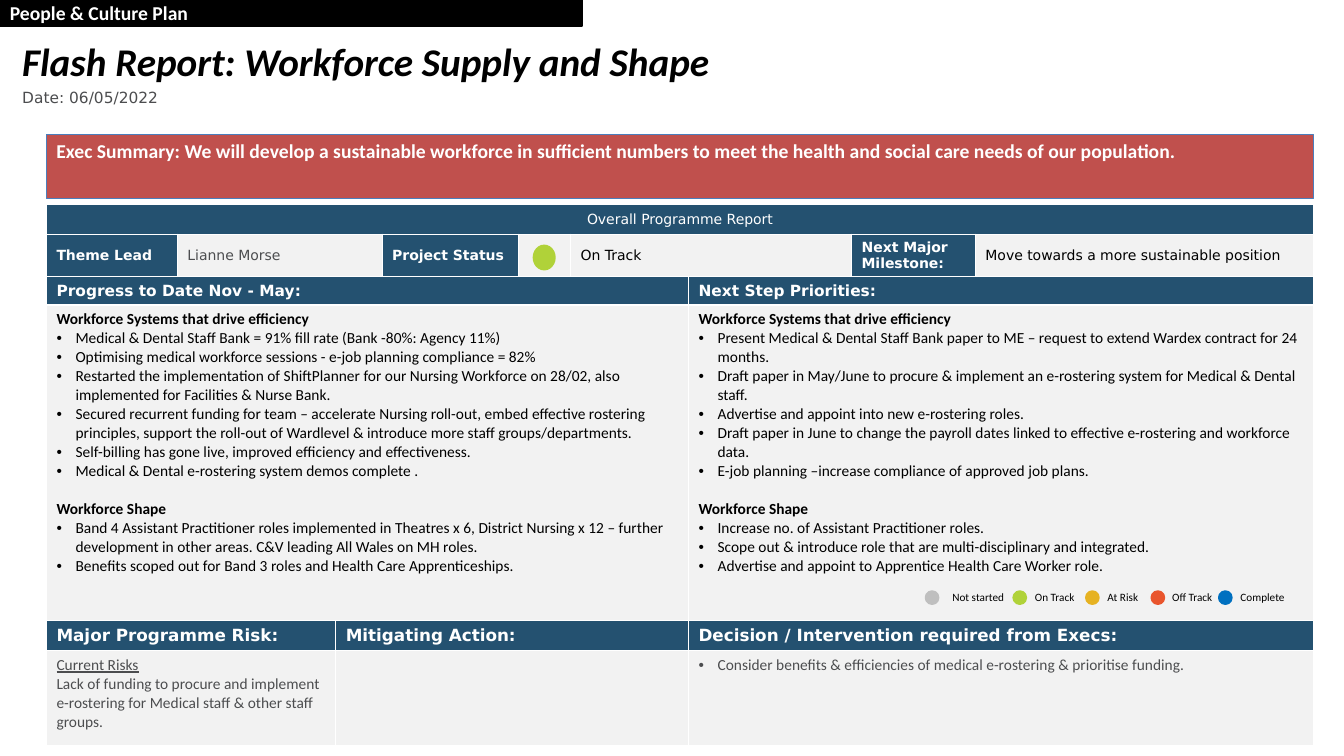
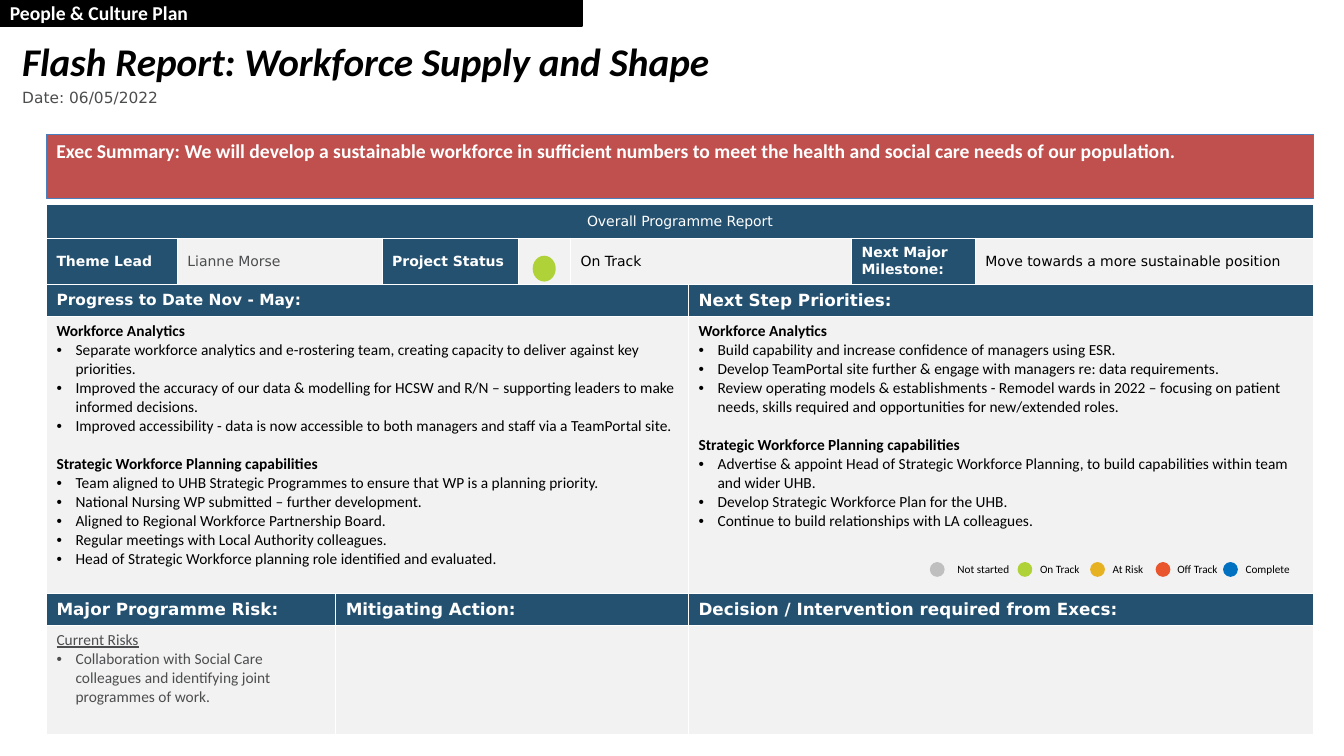
"""Build two flash report slides for the workforce supply and shape theme."""
from dataclasses import dataclass

from lxml import etree
from pptx import Presentation
from pptx import util as u
from pptx.dml.color import RGBColor
from pptx.enum import shapes, text
from pptx.oxml import ns


@dataclass(frozen=True)
class Theme:
    navy: str = "245170"
    panel: str = "F2F2F2"
    red: str = "C0504D"
    red_edge: str = "4B7EBC"
    black: str = "000000"
    white: str = "FFFFFF"
    grey: str = "4C4D4F"
    not_started: str = "BFBFBF"
    on_track: str = "B0D239"
    at_risk: str = "E6B222"
    off_track: str = "E9552D"
    complete: str = "0070C0"
    body_font: str = "Calibri"
    label_font: str = "DejaVu Sans"
    title_size: int = 28
    banner_size: int = 14
    heading_size: int = 12
    body_size: int = 11
    label_size: int = 10
    legend_size: int = 8


theme = Theme()

LEFT, WIDTH = 1.17, 31.93
COLUMNS = [3.3, 3.99, 1.17, 3.43, 1.32, 2.97, 4.11, 3.12, 8.52]
CELL_STARTS = [[0], [0, 1, 3, 4, 5, 7, 8], [0, 6], [0, 6], [0, 2, 6], [0, 2, 6]]
STATUS_ROW = ["Theme Lead", "Lianne Morse", "Project Status", "", "On Track",
              "Next Major Milestone:", "Move towards a more sustainable position"]
STATUS_LABELS = {"Theme Lead", "Project Status", "Next Major Milestone:"}
LEGEND = [
    ("Not started", theme.not_started, 0, 0.41, 2.18),
    ("On Track", theme.on_track, 2.21, 0.28, 1.7),
    ("At Risk", theme.at_risk, 4.04, 0.28, 1.45),
    ("Off Track", theme.off_track, 5.69, 0.26, 1.75),
    ("Complete", theme.complete, 7.39, 0.28, 1.68),
]

REPORTS = [
    {
        "rows": [0.74, 1.07, 0.71, 7.95, 0.76, 2.39],
        "priorities_size": theme.body_size,
        "status_top": 6.2,
        "legend": (23.34, 14.91),
        "progress": [
            ("Workforce Systems that drive efficiency", [
                "Medical & Dental Staff Bank = 91% fill rate (Bank -80%: Agency 11%)",
                "Optimising medical workforce sessions - e-job planning compliance = 82%",
                "Restarted the implementation of ShiftPlanner for our Nursing Workforce on 28/02, "
                "also implemented for Facilities & Nurse Bank.",
                "Secured recurrent funding for team – accelerate Nursing roll-out, embed effective "
                "rostering principles, support the roll-out of Wardlevel & introduce more staff "
                "groups/departments.",
                "Self-billing has gone live, improved efficiency and effectiveness.",
                "Medical & Dental e-rostering system demos complete .",
            ]),
            ("Workforce Shape", [
                "Band 4 Assistant Practitioner roles implemented in Theatres x 6, District Nursing "
                "x 12 – further development in other areas. C&V leading All Wales on MH roles.",
                "Benefits scoped out for Band 3 roles and Health Care Apprenticeships.",
            ]),
        ],
        "priorities": [
            ("Workforce Systems that drive efficiency", [
                "Present Medical & Dental Staff Bank paper to ME – request to extend Wardex "
                "contract for 24 months.",
                "Draft paper in May/June to procure & implement an e-rostering system for Medical "
                "& Dental staff.",
                "Advertise and appoint into new e-rostering roles.",
                "Draft paper in June to change the payroll dates linked to effective e-rostering "
                "and workforce data.",
                "E-job planning –increase compliance of approved job plans.",
            ]),
            ("Workforce Shape", [
                "Increase no. of Assistant Practitioner roles.",
                "Scope out & introduce role that are multi-disciplinary and integrated.",
                "Advertise and appoint to Apprentice Health Care Worker role.",
            ]),
        ],
        "risk": "Lack of funding to procure and implement e-rostering for Medical staff & other "
                "staff groups.",
        "risk_bullet": False,
        "decision": "Consider benefits & efficiencies of medical e-rostering & prioritise funding.",
    },
    {
        "rows": [0.84, 1.17, 0.81, 6.98, 0.81, 2.74],
        "priorities_size": theme.heading_size,
        "status_top": 6.48,
        "legend": (23.47, 14.2),
        "progress": [
            ("Workforce Analytics", [
                "Separate workforce analytics and e-rostering team, creating capacity to deliver "
                "against key priorities.",
                "Improved the accuracy of our data & modelling for HCSW and R/N – supporting "
                "leaders to make informed decisions.",
                "Improved accessibility - data is now accessible to both managers and staff via a "
                "TeamPortal site.",
            ]),
            ("Strategic Workforce Planning capabilities", [
                "Team aligned to UHB Strategic Programmes to ensure that WP is a planning priority.",
                "National Nursing WP submitted – further development.",
                "Aligned to Regional Workforce Partnership Board.",
                "Regular meetings with Local Authority colleagues.",
                "Head of Strategic Workforce planning role identified and evaluated.",
            ]),
        ],
        "priorities": [
            ("Workforce Analytics", [
                "Build capability and increase confidence of managers using ESR.",
                "Develop TeamPortal site further & engage with managers re: data requirements.",
                "Review operating models & establishments - Remodel wards in 2022 – focusing on "
                "patient needs, skills required and opportunities for new/extended roles.",
            ]),
            ("Strategic Workforce Planning capabilities", [
                "Advertise & appoint Head of Strategic Workforce Planning, to build capabilities "
                "within team and wider UHB.",
                "Develop Strategic Workforce Plan for the UHB.",
                "Continue to build relationships with LA colleagues.",
            ]),
        ],
        "risk": "Collaboration with Social Care colleagues and identifying joint programmes of work.",
        "risk_bullet": True,
        "decision": "",
    },
]


def write(frame, content, size=theme.body_size, colour=theme.black, font=theme.body_font,
          bold=False, italic=False, underline=False, bullet=False, before=0,
          align=text.PP_ALIGN.LEFT):
    paragraph = frame.add_paragraph() if frame.text else frame.paragraphs[0]
    paragraph.alignment = align
    if before:
        paragraph.space_before = u.Pt(before)
    if bullet:
        properties = paragraph._p.get_or_add_pPr()
        properties.set("marL", str(u.Cm(0.48)))
        properties.set("indent", str(-u.Cm(0.48)))
        etree.SubElement(properties, ns.qn("a:buFont")).set("typeface", "Arial")
        etree.SubElement(properties, ns.qn("a:buChar")).set("char", "•")
    run = paragraph.add_run()
    run.text = content
    run.font.size = u.Pt(size)
    run.font.name = font
    run.font.color.rgb = RGBColor.from_string(colour)
    run.font.bold, run.font.italic, run.font.underline = bold, italic, underline


def add_block(parent, box, kind=None, fill=None, edge=None, edge_width=2,
              anchor=text.MSO_ANCHOR.TOP):
    box = [u.Cm(length) for length in box]
    if kind is None:
        shape = parent.add_textbox(*box)
    else:
        shape = parent.add_shape(kind, *box)
        shape.shadow.inherit = False
        shape.fill.solid()
        shape.fill.fore_color.rgb = RGBColor.from_string(fill)
        shape.line.color.rgb = RGBColor.from_string(edge or fill)
        shape.line.width = u.Pt(edge_width)
    shape.text_frame.word_wrap = True
    shape.text_frame.vertical_anchor = anchor
    return shape.text_frame


presentation = Presentation()
presentation.slide_width, presentation.slide_height = u.Cm(33.87), u.Cm(19.05)
RECTANGLE, OVAL = shapes.MSO_SHAPE.RECTANGLE, shapes.MSO_SHAPE.OVAL
MIDDLE = text.MSO_ANCHOR.MIDDLE

for report in REPORTS:
    slide = presentation.slides.add_slide(presentation.slide_layouts[6])

    table = slide.shapes.add_table(
        len(report["rows"]), len(COLUMNS), u.Cm(LEFT), u.Cm(5.16), u.Cm(WIDTH),
        u.Cm(sum(report["rows"]))).table
    table.first_row = table.horz_banding = False
    for column, width in zip(table.columns, COLUMNS):
        column.width = u.Cm(width)
    for row, height in zip(table.rows, report["rows"]):
        row.height = u.Cm(height)

    for row_index, starts in enumerate(CELL_STARTS):
        for start, end in zip(starts, starts[1:] + [len(COLUMNS)]):
            is_label = row_index in (0, 2, 4) or (row_index == 1 and start in (0, 3, 7))
            for column_index in range(start, end):
                cell = table.cell(row_index, column_index)
                for side in ("a:lnL", "a:lnR", "a:lnT", "a:lnB"):
                    border = etree.SubElement(cell._tc.get_or_add_tcPr(), ns.qn(side))
                    border.set("w", str(u.Pt(1)))
                    paint = etree.SubElement(border, ns.qn("a:solidFill"))
                    etree.SubElement(paint, ns.qn("a:srgbClr")).set("val", theme.white)
                cell.fill.solid()
                cell.fill.fore_color.rgb = RGBColor.from_string(
                    theme.navy if is_label else theme.panel)
            cell = table.cell(row_index, start)
            if row_index not in (3, 5):
                cell.vertical_anchor = MIDDLE
            if end - start > 1:
                cell.merge(table.cell(row_index, end - 1))

    write(table.cell(0, 0).text_frame, "Overall Programme Report", size=theme.label_size,
          colour=theme.white, font=theme.label_font, align=text.PP_ALIGN.CENTER)
    for start, content in zip(CELL_STARTS[1], STATUS_ROW):
        if content:
            is_label = content in STATUS_LABELS
            colour = theme.grey if start == 1 else theme.black
            write(table.cell(1, start).text_frame, content, size=theme.label_size,
                  colour=theme.white if is_label else colour, font=theme.label_font, bold=is_label)

    for row_index, start, heading, size in (
            (2, 0, "Progress to Date Nov - May:", theme.body_size),
            (2, 6, "Next Step Priorities:", report["priorities_size"]),
            (4, 0, "Major Programme Risk:", theme.heading_size),
            (4, 2, "Mitigating Action:", theme.heading_size),
            (4, 6, "Decision / Intervention required from Execs:", theme.heading_size)):
        write(table.cell(row_index, start).text_frame, heading, size=size,
              colour=theme.white, font=theme.label_font, bold=True)

    for start, sections in ((0, report["progress"]), (6, report["priorities"])):
        frame = table.cell(3, start).text_frame
        for index, (heading, items) in enumerate(sections):
            write(frame, heading, bold=True, before=13.4 if index else 0)
            for item in items:
                write(frame, item, bullet=True)

    risk_frame = table.cell(5, 0).text_frame
    write(risk_frame, "Current Risks", colour=theme.grey, underline=True)
    write(risk_frame, report["risk"], colour=theme.grey, bullet=report["risk_bullet"])
    if report["decision"]:
        write(table.cell(5, 6).text_frame, report["decision"], colour=theme.grey, bullet=True)

    legend = slide.shapes.add_group_shape().shapes
    legend_left, legend_top = report["legend"]
    for label, colour, offset, gap, width in LEGEND:
        dot_left = legend_left + offset
        add_block(legend, (dot_left, legend_top, 0.3, 0.3), OVAL, colour)
        frame = add_block(legend, (dot_left + gap, legend_top - 0.15, width, 0.61))
        write(frame, label, size=theme.legend_size)

    write(add_block(slide.shapes, (0.31, 2.1, 12.78, 0.74)), "Date: 06/05/2022",
          colour=theme.grey, font=theme.label_font)
    write(add_block(slide.shapes, (0, 0, 14.68, 0.66), RECTANGLE, theme.black, edge_width=1.5,
                    anchor=MIDDLE),
          "People & Culture Plan", size=theme.banner_size, colour=theme.white, bold=True)
    write(add_block(slide.shapes, (0.31, 0.81, 25.07, 2.08)),
          "Flash Report: Workforce Supply and Shape", size=theme.title_size, bold=True, italic=True)
    write(add_block(slide.shapes, (LEFT, 3.38, WIDTH, 1.63), RECTANGLE, theme.red,
                    theme.red_edge, 0.75),
          "Exec Summary: We will develop a sustainable workforce in sufficient numbers to meet "
          "the health and social care needs of our population.",
          size=theme.banner_size, colour=theme.white, bold=True)
    add_block(slide.shapes, (13.46, report["status_top"], 0.51, 0.58), OVAL, theme.on_track)

presentation.save("out.pptx")
